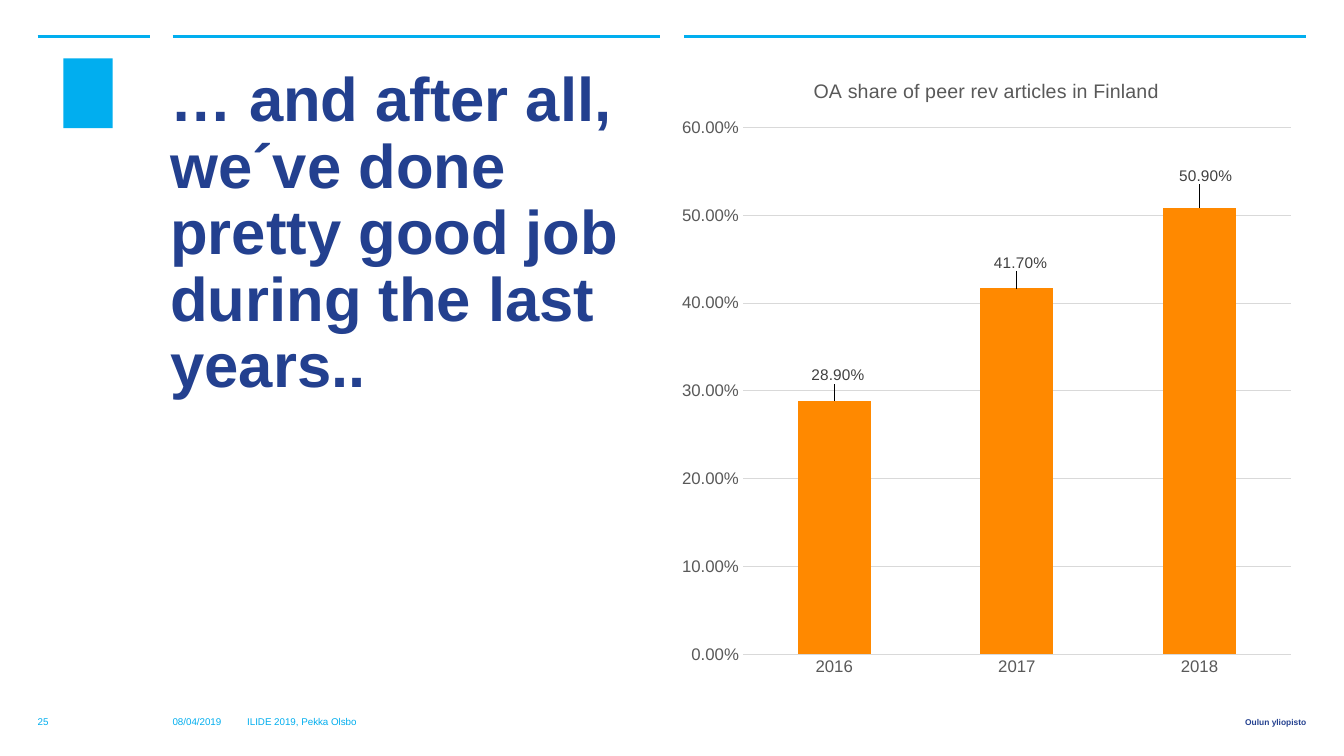
from lxml import etree
from pptx import Presentation
from pptx.chart.data import CategoryChartData
from pptx.dml.color import RGBColor
from pptx.enum.chart import XL_CHART_TYPE, XL_LABEL_POSITION, XL_TICK_MARK
from pptx.enum.shapes import MSO_CONNECTOR, MSO_SHAPE
from pptx.enum.text import MSO_ANCHOR, MSO_AUTO_SIZE, PP_ALIGN
from pptx.oxml.ns import qn
from pptx.util import Cm, Pt

COLUMNS = XL_CHART_TYPE.COLUMN_CLUSTERED
OUTSIDE = XL_LABEL_POSITION.OUTSIDE_END
NO_TICK = XL_TICK_MARK.NONE
STRAIGHT = MSO_CONNECTOR.STRAIGHT
RECTANGLE = MSO_SHAPE.RECTANGLE
TOP, MIDDLE = MSO_ANCHOR.TOP, MSO_ANCHOR.MIDDLE
LEFT, RIGHT = PP_ALIGN.LEFT, PP_ALIGN.RIGHT
NO_AUTOFIT = MSO_AUTO_SIZE.NONE

FONT = "Arial"
COLORS = {
    "cyan": "01AEEF",
    "navy": "23408F",
    "orange": "FF8900",
    "axis": "595959",
    "label": "404040",
    "grid": "D9D9D9",
}


def rgb(name):
    return RGBColor.from_string(COLORS[name])


def style_font(font, size, color, bold=False):
    font.name, font.size, font.bold = FONT, Pt(size), bold
    font.color.rgb = rgb(color)


def write_text(frame, text, size=7, color="cyan", bold=False, align=LEFT,
               anchor=MIDDLE, spacing=None, inset=None):
    frame.word_wrap = True
    frame.auto_size = NO_AUTOFIT
    frame.vertical_anchor = anchor
    if inset is not None:
        frame.margin_left = frame.margin_right = Cm(inset)
        frame.margin_top = frame.margin_bottom = Cm(inset)
    paragraph = frame.paragraphs[0]
    paragraph.alignment = align
    paragraph.line_spacing = spacing
    run = paragraph.add_run()
    run.text = text
    style_font(run.font, size, color, bold)


def add_layout(parent, index, **values):
    """Put a manual chart layout into parent at the given child index."""
    for old in parent.findall(qn("c:layout")):
        parent.remove(old)
    layout = etree.Element(qn("c:layout"))
    manual = etree.SubElement(layout, qn("c:manualLayout"))
    for tag, value in values.items():
        etree.SubElement(manual, qn(f"c:{tag}")).set("val", str(value))
    parent.insert(index, layout)


class SlideBuilder:
    def __init__(self, slide):
        self.slide = slide
        self.shapes = slide.shapes

    def title(self, text, left, top, width, height):
        title = self.shapes.title
        title.left, title.top = Cm(left), Cm(top)
        title.width, title.height = Cm(width), Cm(height)
        write_text(title.text_frame, text, size=44, color="navy", bold=True,
                   anchor=TOP, spacing=0.9)

    def rule(self, start, end, y):
        rule = self.shapes.add_connector(STRAIGHT, Cm(start), Cm(y), Cm(end), Cm(y))
        rule.line.color.rgb = rgb("cyan")
        rule.line.width = Pt(1.75)
        etree.SubElement(rule._element.spPr, qn("a:effectLst"))

    def emblem(self, left, top, width, height):
        emblem = self.shapes.add_shape(RECTANGLE, Cm(left), Cm(top), Cm(width), Cm(height))
        emblem.shadow.inherit = False
        emblem.fill.solid()
        emblem.fill.fore_color.rgb = rgb("cyan")
        emblem.line.fill.background()

    def footer(self, text, left, width, **text_format):
        footer = self.shapes.add_textbox(Cm(left), Cm(17.88), Cm(width), Cm(0.61))
        write_text(footer.text_frame, text, inset=0, **text_format)

    def column_chart(self, heading, shares, label_shifts, left, top, width, height):
        data = CategoryChartData(number_format="0.00%")
        data.categories = list(shares)
        data.add_series("Series 1", list(shares.values()))
        chart = self.shapes.add_chart(
            COLUMNS, Cm(left), Cm(top), Cm(width), Cm(height), data).chart
        style_font(chart.font, 10, "axis")
        chart.has_legend = False

        # Heading and plot area
        chart.has_title = True
        heading_run = chart.chart_title.text_frame.paragraphs[0].add_run()
        heading_run.text = heading
        style_font(heading_run.font, 14, "axis")
        chart.chart_title.include_in_layout = False
        plot_area = chart._chartSpace.find(".//" + qn("c:plotArea"))
        add_layout(plot_area, 0, layoutTarget="inner", xMode="edge", yMode="edge",
                   x=0.116, y=0.113, w=0.864, h=0.833)

        # Axes
        for axis in (chart.category_axis, chart.value_axis):
            axis.major_tick_mark = axis.minor_tick_mark = NO_TICK
            axis.format.line.fill.background()
            style_font(axis.tick_labels.font, 12, "axis")
        shares_axis = chart.value_axis
        shares_axis.minimum_scale, shares_axis.maximum_scale = 0, 0.6
        shares_axis.major_unit = 0.1
        shares_axis.tick_labels.number_format = "0.00%"
        shares_axis.tick_labels.number_format_is_linked = False
        shares_axis.has_major_gridlines = True
        gridline = shares_axis.major_gridlines.format.line
        gridline.color.rgb = rgb("grid")
        gridline.width = Pt(0.75)

        # Columns and their labels
        plot = chart.plots[0]
        plot.gap_width = 150
        plot.vary_by_categories = False
        columns = plot.series[0]
        columns.format.fill.solid()
        columns.format.fill.fore_color.rgb = rgb("orange")
        labels = columns.data_labels
        labels.show_value = True
        labels.number_format, labels.number_format_is_linked = "0.00%", False
        labels.position = OUTSIDE
        style_font(labels.font, 11, "label")
        for i in range(len(shares)):
            label = columns.points[i].data_label
            style_font(label.font, 11, "label")
            label.position = OUTSIDE
        for element, (x, y) in zip(plot_area.iter(qn("c:dLbl")), label_shifts):
            add_layout(element, 1, x=x, y=y)


def main():
    prs = Presentation()
    prs.slide_width, prs.slide_height = Cm(33.87), Cm(19.05)
    page = SlideBuilder(prs.slides.add_slide(prs.slide_layouts[5]))

    # Header rules and emblem
    for start, end in ((0.95, 3.77), (4.35, 16.64), (17.24, 32.92)):
        page.rule(start, end, 0.92)
    page.emblem(1.6, 1.47, 1.24, 1.76)

    # Message
    page.title("… and after all, we´ve done pretty good job during the last years..",
               4.04, 1.6, 12.6, 9.91)

    # Open access shares
    page.column_chart("OA share of peer rev articles in Finland",
                      {"2016": 0.289, "2017": 0.417, "2018": 0.509},
                      ((0.006, -0.02), (0.006, -0.02), (0.01, -0.03)),
                      16.87, 1.42, 15.98, 15.93)

    # Footer
    page.footer("25", 0.95, 1.07)
    page.footer("08/04/2019", 4.35, 1.83)
    page.footer("ILIDE 2019, Pekka Olsbo", 6.23, 12.83)
    page.footer("Oulun yliopisto", 26.98, 5.94, size=6, color="navy", bold=True, align=RIGHT)

    prs.save("out.pptx")


if __name__ == "__main__":
    main()
